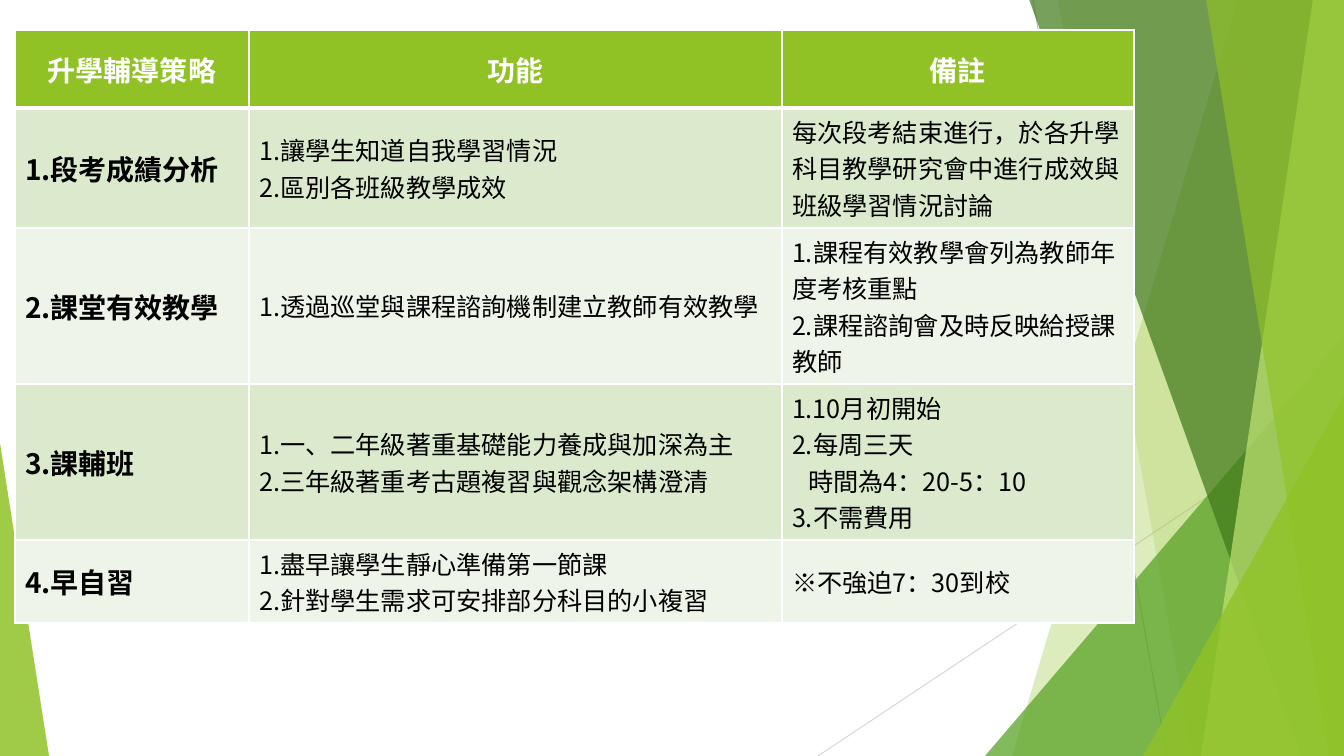
from lxml import etree
from pptx import Presentation
from pptx.dml.color import RGBColor
from pptx.enum.shapes import MSO_CONNECTOR as Line, MSO_SHAPE as Shape
from pptx.enum.text import MSO_ANCHOR as Anchor, PP_ALIGN as Align
from pptx.oxml.ns import qn
from pptx.util import Pt

EMU_PER_PX = 914400 / 100.8
WIDTH, HEIGHT = 1344, 756
FONT = "Noto Sans CJK SC"

WHITE = RGBColor(0xFF, 0xFF, 0xFF)
BLACK = RGBColor(0x00, 0x00, 0x00)
LIME = RGBColor(0x90, 0xC2, 0x26)
PALE_LIME = RGBColor(0xC0, 0xE4, 0x74)
GREEN = RGBColor(0x54, 0xA0, 0x21)
DARK_GREEN = RGBColor(0x3F, 0x78, 0x19)
GREY = RGBColor(0xBF, 0xBF, 0xBF)
LIGHT_GREY = RGBColor(0xD9, 0xD9, 0xD9)
BANDS = (RGBColor(0xDB, 0xE9, 0xCD), RGBColor(0xEE, 0xF4, 0xE8))

HEADERS = ("升學輔導策略", "功能", "備註")
STRATEGIES = [
    (["1.段考成績分析"],
     ["1.讓學生知道自我學習情況", "2.區別各班級教學成效"],
     ["每次段考結束進行，於各升學科目教學研究會中進行成效與班級學習情況討論"]),
    (["2.課堂有效教學"],
     ["1.透過巡堂與課程諮詢機制建立教師有效教學"],
     ["1.課程有效教學會列為教師年度考核重點", "2.課程諮詢會及時反映給授課教師"]),
    (["3.課輔班"],
     ["1.一、二年級著重基礎能力養成與加深為主", "2.三年級著重考古題複習與觀念架構澄清"],
     ["1.10月初開始", "2.每周三天", "時間為4：20-5：10", "3.不需費用"]),
    (["4.早自習"],
     ["1.盡早讓學生靜心準備第一節課", "2.針對學生需求可安排部分科目的小複習"],
     ["※不強迫7：30到校"]),
]
INDENTED = {"時間為4：20-5：10": 16}
TABLE_LEFT, TABLE_TOP = 15, 30
COLUMN_WIDTHS = (234, 533, 352)
ROW_HEIGHTS = (78, 120, 156, 156, 83)

# start x, start y, end x, end y, colour
RAYS = [(1033, 0, 1167, 756, GREY), (1344, 406, 818, 756, LIGHT_GREY)]
# Back to front. Panel: top x, bottom x. Triangle: left, top, width, apex position.
FACETS = [
    ("panel", (1238, 1012), LIME, 30),
    ("panel", (1058, 1192), LIME, 20),
    ("triangle", (985, 336, 359, 1), GREEN, 72),
    ("panel", (1029, 1301), DARK_GREEN, 70),
    ("panel", (1313, 1201), PALE_LIME, 70),
    ("panel", (1206, 1329), LIME, 65),
    ("triangle", (1143, 396, 201, 1), LIME, 80),
    ("triangle", (0, 443, 49, 0), LIME, 85),
]


def px(length):
    return round(length * EMU_PER_PX)


def add_ray(shapes, start_x, start_y, end_x, end_y, colour):
    ray = shapes.add_connector(Line.STRAIGHT, px(start_x), px(start_y), px(end_x), px(end_y))
    ray.line.color.rgb = colour
    ray.line.width = Pt(0.75)
    etree.SubElement(ray.element.spPr, qn("a:effectLst"))


def add_panel(shapes, top_x, bottom_x):
    """Draw a full-height panel with a slanted left edge, reaching the right edge of the slide."""
    builder = shapes.build_freeform(top_x, -1, scale=EMU_PER_PX)
    builder.add_line_segments([(WIDTH, -1), (WIDTH, HEIGHT), (bottom_x, HEIGHT)], close=True)
    return builder.convert_to_shape()


def add_triangle(shapes, left, top, width, apex):
    triangle = shapes.add_shape(Shape.ISOSCELES_TRIANGLE, px(left), px(top),
                                px(width), px(HEIGHT - top))
    triangle.adjustments[0] = apex
    return triangle


def add_facet(shapes, kind, geometry, colour, opacity):
    draw = add_panel if kind == "panel" else add_triangle
    facet = draw(shapes, *geometry)
    facet.shadow.inherit = False
    facet.line.fill.background()
    facet.fill.solid()
    facet.fill.fore_color.rgb = colour
    tint = facet.element.spPr.find(qn("a:solidFill")).find(qn("a:srgbClr"))
    etree.SubElement(tint, qn("a:alpha"), val=str(opacity * 1000))


def set_borders(cell, top, bottom):
    """Give the cell white borders: 1 pt at the sides, the given points above and below."""
    properties = cell._tc.get_or_add_tcPr()
    for place, (side, width) in enumerate(zip("LRTB", (1, 1, top, bottom))):
        border = etree.Element(qn(f"a:ln{side}"), w=str(Pt(width)))
        fill = etree.SubElement(border, qn("a:solidFill"))
        etree.SubElement(fill, qn("a:srgbClr"), val=str(WHITE))
        properties.insert(place, border)


def write_cell(cell, lines, size, bold, colour, align):
    cell.vertical_anchor = Anchor.MIDDLE
    for number, line in enumerate(lines):
        frame = cell.text_frame
        para = frame.add_paragraph() if number else frame.paragraphs[0]
        para.alignment = align
        if line in INDENTED:
            para._p.get_or_add_pPr().set("marL", str(px(INDENTED[line])))
        span = para.add_run()
        span.text = line
        span.font.size = Pt(size)
        span.font.bold = bold
        span.font.color.rgb = colour
        span.font.name = FONT
        etree.SubElement(span._r.get_or_add_rPr(), qn("a:ea"), typeface=FONT)


def add_strategy_table(shapes):
    rows = [[[header] for header in HEADERS], *STRATEGIES]
    table = shapes.add_table(len(rows), len(HEADERS), px(TABLE_LEFT), px(TABLE_TOP),
                             px(sum(COLUMN_WIDTHS)), px(sum(ROW_HEIGHTS))).table
    for column, width in zip(table.columns, COLUMN_WIDTHS):
        column.width = px(width)
    for r, (row, height) in enumerate(zip(rows, ROW_HEIGHTS)):
        table.rows[r].height = px(height)
        is_header = r == 0
        for c, lines in enumerate(row):
            cell = table.cell(r, c)
            is_heading = is_header or c == 0
            write_cell(cell, lines, 20 if is_heading else 18, is_heading,
                       WHITE if is_header else BLACK,
                       Align.CENTER if is_header else Align.LEFT)
            cell.fill.solid()
            cell.fill.fore_color.rgb = LIME if is_header else BANDS[(r - 1) % 2]
            set_borders(cell, top=3 if r == 1 else 1, bottom=3 if is_header else 1)


def main():
    deck = Presentation()
    deck.slide_width, deck.slide_height = px(WIDTH), px(HEIGHT)
    page = deck.slides.add_slide(deck.slide_layouts[6])
    for ray in RAYS:
        add_ray(page.shapes, *ray)
    for facet in FACETS:
        add_facet(page.shapes, *facet)
    add_strategy_table(page.shapes)
    deck.save("out.pptx")


if __name__ == "__main__":
    main()
